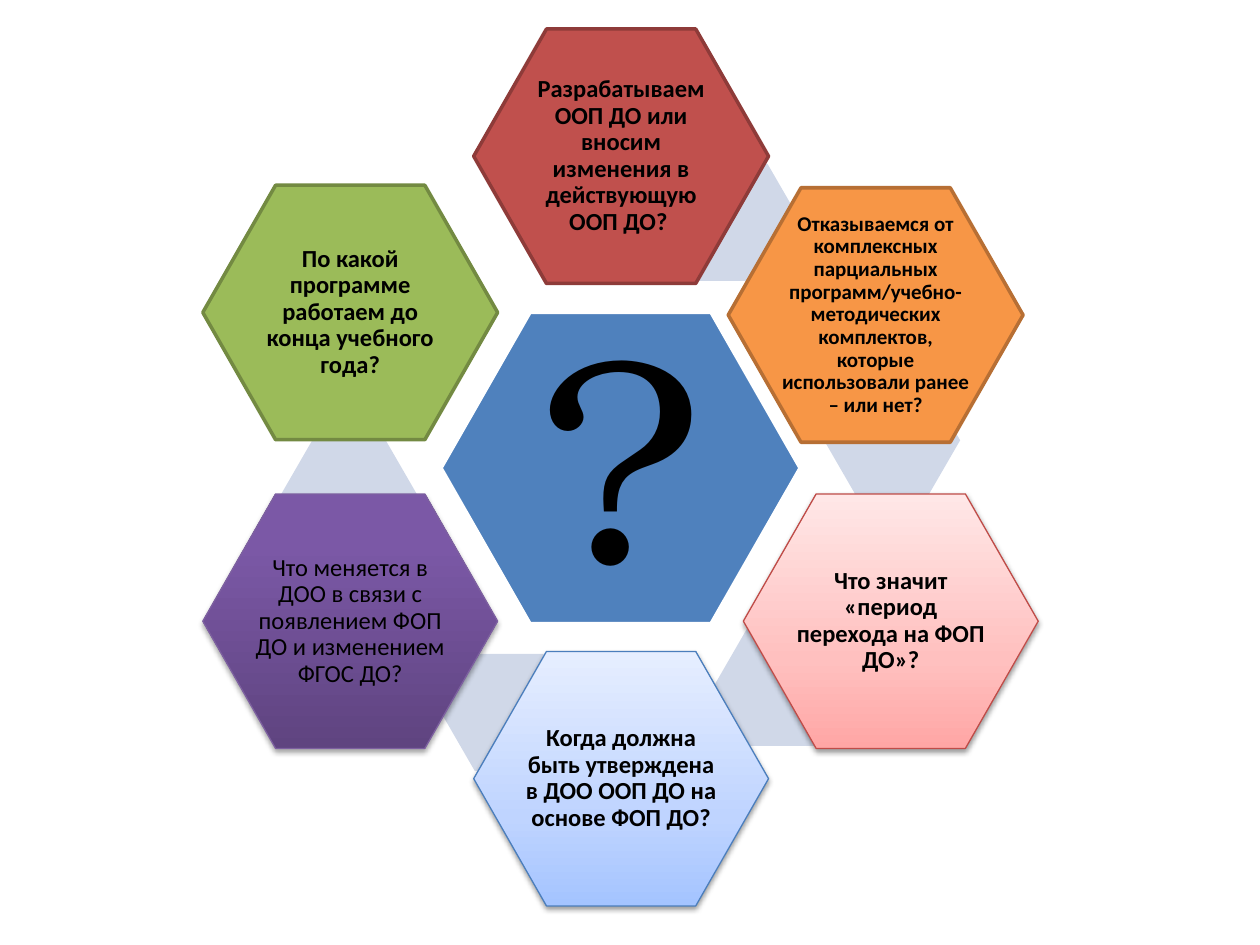
from copy import deepcopy

from lxml.etree import SubElement
from pptx import Presentation
from pptx.dml.color import RGBColor
from pptx.enum.shapes import MSO_SHAPE
from pptx.enum.text import MSO_ANCHOR, PP_ALIGN
from pptx.oxml.ns import qn
from pptx.util import Inches, Pt

CENTER_SIZE = (2.85, 2.47)
PETAL_SIZE = (2.34, 2.02)
LINK_SIZE = (1.08, 0.93)
LINK_COLOR = "D0D8E8"

# Links and petals clockwise from the top, in stacking order
PETALS = [
    dict(text="Разрабатываем ООП ДО или вносим изменения в действующую ООП ДО? ",
         link=(5.28, 1.3), at=(3.76, 0.23), fill="C0504D", line="8E3B39"),
    dict(text="Отказываемся от комплексных парциальных программ/учебно-методических "
              "комплектов, которые использовали ранее – или нет?",
         link=(6.54, 3.03), at=(5.78, 1.49), fill="F79646", line="B76F34", size=12),
    dict(text="Что значит «период перехода на ФОП ДО»?",
         link=(5.66, 4.99), at=(5.9, 3.92), line="BF4C48", shadow=(38, 1.6),
         fill=[(0, "FFA6A5"), (0.35, "FFC0BF"), (1, "FFE7E7")]),
    dict(text="Когда должна быть утверждена в ДОО ООП ДО на основе ФОП ДО?",
         link=(3.5, 5.19), at=(3.76, 5.17), line="4B7EBC", shadow=(38, 1.6),
         fill=[(0, "A4C4FF"), (0.35, "BFD4FF"), (1, "E6EEFF")]),
    dict(text="Что меняется в ДОО в связи с появлением ФОП ДО и изменением ФГОС ДО?",
         link=(2.23, 3.46), at=(1.61, 3.92), line="7D60A0", shadow=(35, 1.8), bold=False,
         fill=[(0, "5F4480"), (0.8, "7B58A6"), (1, "7C57A8")]),
    dict(text="По какой программе работаем до конца учебного года?",
         at=(1.61, 1.47), fill="9BBB59", line="738A42"),
]


def color(value):
    return RGBColor.from_string(value)


def fill_gradient(shape, stops):
    """Fill from bottom to top with any number of colour stops."""
    shape.fill.gradient()
    shape.fill.gradient_angle = 90
    stop_list = shape._element.spPr.find(".//" + qn("a:gsLst"))
    while len(stop_list) < len(stops):
        stop_list.append(deepcopy(stop_list[-1]))
    for stop, (position, value) in zip(shape.fill.gradient_stops, stops):
        stop.position = position
        stop.color.rgb = color(value)


def add_shadow(shape, opacity, distance):
    """Add a soft black shadow straight below the shape."""
    effects = shape._element.spPr.find(qn("a:effectLst"))
    shadow = SubElement(effects, qn("a:outerShdw"), blurRad=str(Pt(3.1)),
                        dist=str(Pt(distance)), dir="5400000", rotWithShape="0")
    black = SubElement(shadow, qn("a:srgbClr"), val="000000")
    SubElement(black, qn("a:alpha"), val=str(opacity * 1000))


def add_hexagon(slide, at, size, fill, line=None, line_width=2.0, adjust=0.286, shadow=None):
    shape = slide.shapes.add_shape(
        MSO_SHAPE.HEXAGON, *(Inches(length) for length in (*at, *size)))
    shape.adjustments[0] = adjust
    shape.shadow.inherit = False
    if isinstance(fill, str):
        shape.fill.solid()
        shape.fill.fore_color.rgb = color(fill)
    else:
        fill_gradient(shape, fill)
    if line:
        shape.line.color.rgb = color(line)
        shape.line.width = Pt(line_width)
    else:
        shape.line.fill.background()
    if shadow:
        add_shadow(shape, *shadow)


def add_text(slide, text, at, size, font="Calibri", font_size=14, bold=False, inset=0.02):
    """Set text in the middle two thirds of a hexagon."""
    left, top = (start + length / 6 for start, length in zip(at, size))
    width, height = (length * 2 / 3 for length in size)
    box = slide.shapes.add_textbox(Inches(left), Inches(top), Inches(width), Inches(height))
    frame = box.text_frame
    frame.word_wrap = True
    frame.vertical_anchor = MSO_ANCHOR.MIDDLE
    frame.margin_left = frame.margin_right = Inches(inset)
    frame.margin_top = frame.margin_bottom = Inches(inset)
    paragraph = frame.paragraphs[0]
    paragraph.alignment = PP_ALIGN.CENTER
    paragraph.line_spacing = 0.9
    # Space after as a share of the line height
    space_after = SubElement(paragraph._p.get_or_add_pPr(), qn("a:spcAft"))
    SubElement(space_after, qn("a:spcPct"), val="35000")
    run = paragraph.add_run()
    run.text = text
    run.font.name = font
    run.font.size = Pt(font_size)
    run.font.bold = bold
    run.font.color.rgb = color("000000")


def add_petal(slide, text, at, fill, line, link=None, size=14, bold=True, shadow=None):
    if link:
        add_hexagon(slide, link, LINK_SIZE, LINK_COLOR, adjust=0.289)
    add_hexagon(slide, at, PETAL_SIZE, fill, line, shadow=shadow,
                line_width=0.75 if shadow else 2)
    add_text(slide, text, at, PETAL_SIZE, font_size=size, bold=bold)


def main():
    presentation = Presentation()
    presentation.slide_width = Inches(10)
    presentation.slide_height = Inches(7.5)
    slide = presentation.slides.add_slide(presentation.slide_layouts[6])

    # Central question mark
    center = (3.5, 2.48)
    add_hexagon(slide, center, CENTER_SIZE, "4F81BD", "FFFFFF")
    add_text(slide, "?", center, CENTER_SIZE, font="TeX Gyre Bonum", font_size=166, inset=0.23)

    # Questions around it
    for petal in PETALS:
        add_petal(slide, **petal)

    presentation.save("out.pptx")


if __name__ == "__main__":
    main()
